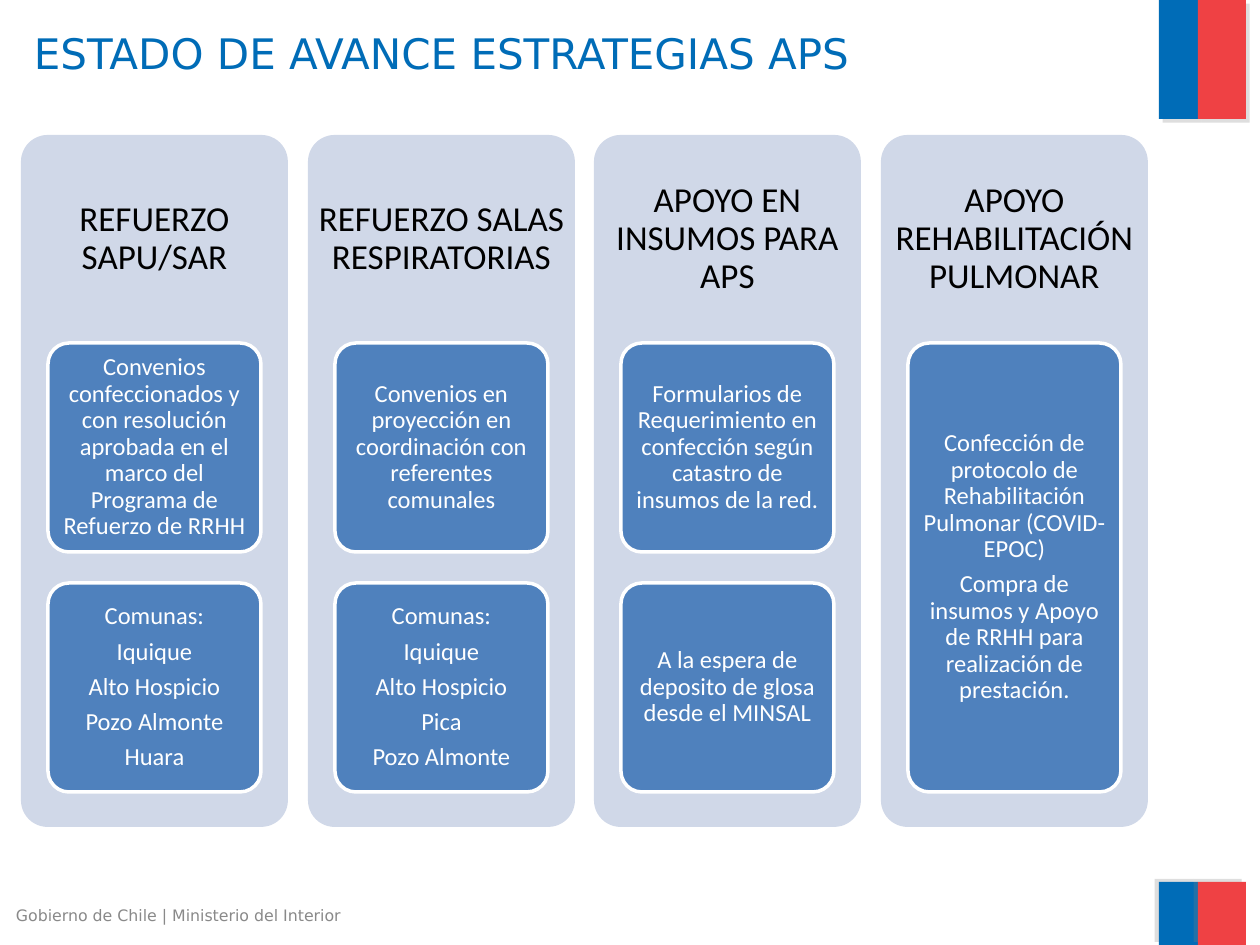
from lxml import etree
from pptx import Presentation, util as u
from pptx.dml.color import RGBColor
from pptx.enum import shapes, text
from pptx.oxml.ns import qn

PX = 914400 // 126

THEME = {
    "blue": "006CB7", "red": "EF4144", "column": "D0D8E8", "card": "4F81BD",
    "white": "FFFFFF", "black": "000000", "footer": "898989", "shadow": "808080",
    "title_pt": 24, "heading_pt": 20, "card_pt": 14, "footer_pt": 9,
    "sans": "DejaVu Sans", "body": "Calibri",
}

STRATEGIES = [
    ("REFUERZO SAPU/SAR", [
        ["Convenios confeccionados y con resolución aprobada en el marco del "
         "Programa de Refuerzo de RRHH"],
        ["Comunas:", "Iquique", "Alto Hospicio", "Pozo Almonte", "Huara"]]),
    ("REFUERZO SALAS RESPIRATORIAS", [
        ["Convenios en proyección en coordinación con referentes comunales"],
        ["Comunas:", "Iquique", "Alto Hospicio", "Pica", "Pozo Almonte"]]),
    ("APOYO EN INSUMOS PARA APS", [
        ["Formularios de Requerimiento en confección según catastro de insumos de la red."],
        ["A la espera de deposito de glosa desde el MINSAL"]]),
    ("APOYO REHABILITACIÓN PULMONAR", [
        ["Confección de protocolo de Rehabilitación Pulmonar (COVID-EPOC)",
         "Compra de insumos y Apoyo de RRHH para realización de prestación."]]),
]


def add_block(kind, box, fill):
    block = slide.shapes.add_shape(kind, *(v * PX for v in box))
    block.shadow.inherit = False
    block.fill.solid()
    block.fill.fore_color.rgb = RGBColor.from_string(THEME[fill])
    block.line.fill.background()
    if kind == shapes.MSO_SHAPE.ROUNDED_RECTANGLE:
        block.adjustments[0] = 0.1
    return block


def write(shape, lines, style, font, color, insets, centered=True):
    """Fill a shape with paragraphs; insets are (horizontal, vertical) in px."""
    frame = shape.text_frame
    across, down = (v * PX for v in insets)
    frame_format = {
        "word_wrap": True,
        "vertical_anchor": text.MSO_ANCHOR.MIDDLE if centered else text.MSO_ANCHOR.TOP,
        "margin_left": across, "margin_right": across,
        "margin_top": down, "margin_bottom": down,
    }
    for name, value in frame_format.items():
        setattr(frame, name, value)
    frame.text = "\n".join(lines)
    for paragraph in frame.paragraphs:
        paragraph.alignment = text.PP_ALIGN.CENTER if centered else text.PP_ALIGN.LEFT
        if centered:
            paragraph.line_spacing = 0.9
            paragraph.space_after = u.Pt(5)
        paragraph.font.name = THEME[font]
        paragraph.font.size = u.Pt(THEME[style])
        paragraph.font.color.rgb = RGBColor.from_string(THEME[color])


prs = Presentation()
prs.slide_width, prs.slide_height = u.Inches(10), u.Inches(7.5)
slide = prs.slides.add_slide(prs.slide_layouts[6])

# Flag bars in the right-hand corners, each with a hard offset shadow
for top, height, angle in [(0, 119, 45), (882, 63, 215)]:
    for left, width, color in [(1159, 39, "blue"), (1198, 48, "red")]:
        bar = add_block(shapes.MSO_SHAPE.RECTANGLE, (left, top, width, height), color)
        effects = bar._element.spPr.find(qn("a:effectLst"))
        shadow = etree.SubElement(effects, qn("a:outerShdw"), blurRad="0",
                                  dist=str(u.Pt(3)), dir=str(angle * 60000),
                                  algn="ctr", rotWithShape="0")
        tint = etree.SubElement(shadow, qn("a:srgbClr"), val=THEME["shadow"])
        etree.SubElement(tint, qn("a:alpha"), val="25000")

title = slide.shapes.add_textbox(*(v * PX for v in (21, 21, 1125, 158)))
write(title, ["ESTADO DE AVANCE ESTRATEGIAS APS"], "title_pt", "sans", "blue",
      (13, 6), centered=False)

# Four equal columns, each sharing its card area among its cards
COLUMN_LEFT, COLUMN_TOP, COLUMN_W, COLUMN_H = 21, 135, 267, 692
COLUMN_STEP = 860 / 3
HEADING_H, CARD_INDENT, CARD_AREA_H, CARD_GAP = 208, 27, 449, 31

for index, (heading, cards) in enumerate(STRATEGIES):
    left = round(COLUMN_LEFT + index * COLUMN_STEP)
    add_block(shapes.MSO_SHAPE.ROUNDED_RECTANGLE,
              (left, COLUMN_TOP, COLUMN_W, COLUMN_H), "column")
    heading_box = slide.shapes.add_textbox(
        *(v * PX for v in (left, COLUMN_TOP, COLUMN_W, HEADING_H)))
    write(heading_box, [heading], "heading_pt", "body", "black", (10, 10))

    card_h = (CARD_AREA_H - CARD_GAP * (len(cards) - 1)) // len(cards)
    for row, lines in enumerate(cards):
        card_top = COLUMN_TOP + HEADING_H + row * (card_h + CARD_GAP)
        card = add_block(shapes.MSO_SHAPE.ROUNDED_RECTANGLE,
                         (left + CARD_INDENT, card_top, COLUMN_W - 2 * CARD_INDENT, card_h),
                         "card")
        card.line.color.rgb = RGBColor.from_string(THEME["white"])
        card.line.width = u.Pt(2)
        write(card, lines, "card_pt", "body", "white", (5, 4))

footer = slide.shapes.add_textbox(*(v * PX for v in (3, 900, 399, 34)))
write(footer, ["Gobierno de Chile | Ministerio del Interior"], "footer_pt", "sans",
      "footer", (13, 6), centered=False)

prs.save("out.pptx")
